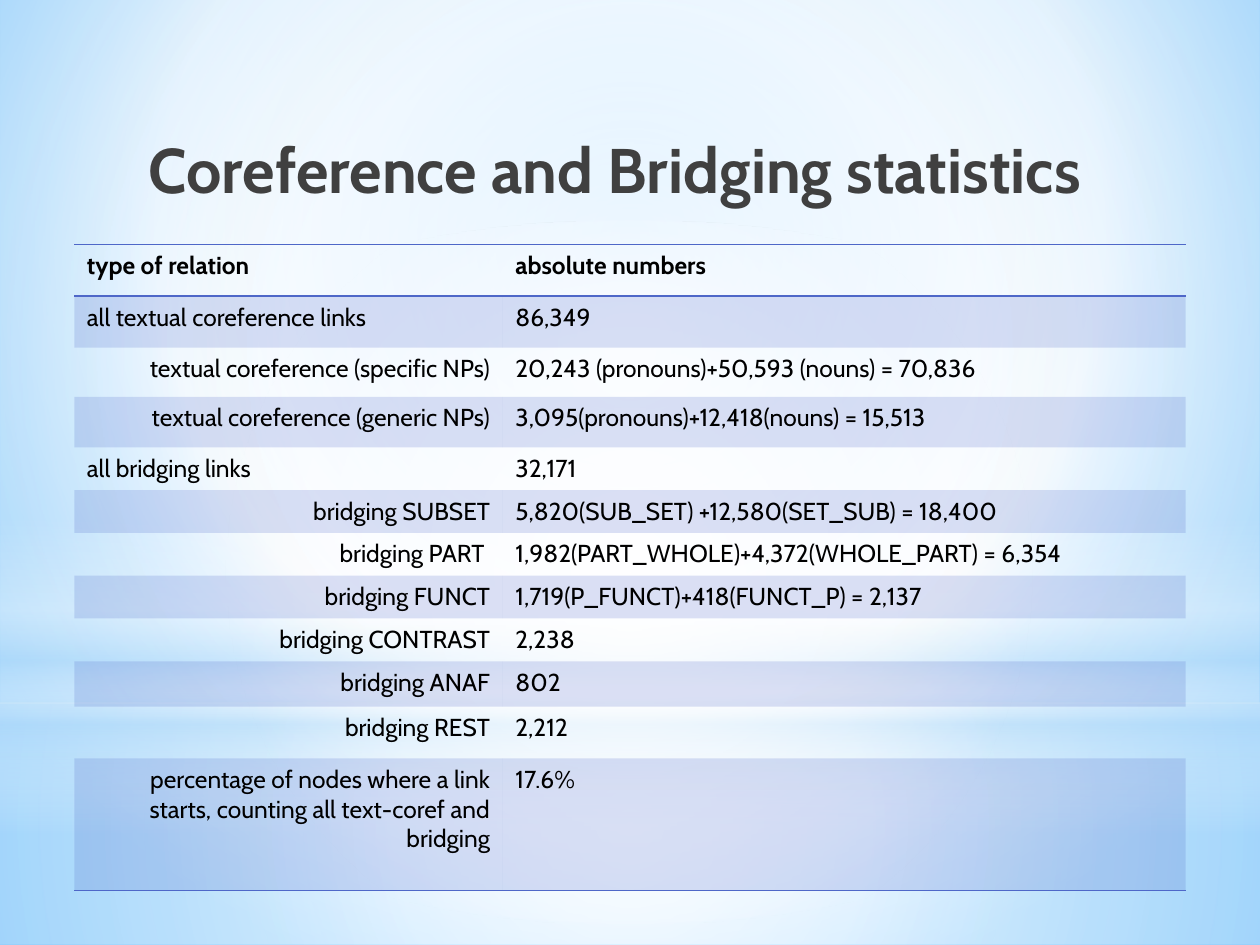
from dataclasses import dataclass

from lxml.etree import SubElement
from pptx import Presentation
from pptx.dml.color import RGBColor
from pptx.enum.shapes import MSO_SHAPE as Shape
from pptx.enum.text import MSO_ANCHOR as Anchor, PP_ALIGN as Align
from pptx.oxml import parse_xml
from pptx.oxml.ns import nsdecls, qn
from pptx.util import Inches, Pt


@dataclass(frozen=True)
class Theme:
    """Colours, font and type sizes of the slide."""
    font: str = "Cabin"
    title_size: int = 36
    body_size: int = 14
    title: str = "404040"
    text: str = "000000"
    accent: str = "4E67C8"
    white: str = "FFFFFF"
    haze: str = "B4DCFA"
    sky: str = "9ED5FF"
    deep_sky: str = "5BB9FF"
    band_alpha: int = 20
    rule_width: int = 1


T = Theme()
CENTER = (50, 50, 50, 50)
NO_STYLE = "{2D5ABB26-0587-4C30-8999-92F81FD0307C}"
COL_WIDTHS = (3.4, 5.42)
ROW_HEIGHTS = (0.41, 0.41, 0.39, 0.4, *[0.34] * 5, 0.36, 0.41, 1.05)
ROWS = (
    ("type of relation", "absolute numbers"),
    ("all textual coreference links", "86,349"),
    ("textual coreference (specific NPs)", "20,243 (pronouns)+50,593 (nouns) = 70,836"),
    ("textual coreference (generic NPs)", "3,095(pronouns)+12,418(nouns) = 15,513"),
    ("all bridging links", "32,171"),
    ("bridging SUBSET", "5,820(SUB_SET) +12,580(SET_SUB) = 18,400"),
    ("bridging PART ", "1,982(PART_WHOLE)+4,372(WHOLE_PART) = 6,354"),
    ("bridging FUNCT", "1,719(P_FUNCT)+418(FUNCT_P) = 2,137"),
    ("bridging CONTRAST", "2,238"),
    ("bridging ANAF", "802"),
    ("bridging REST", "2,212"),
    ("percentage of nodes where a link starts, counting all text-coref and bridging",
     "17.6%"),
)
LEFT_LABELS = (0, 1, 4)
LAST = len(ROWS) - 1
LAYERS = (
    (Shape.RECTANGLE, (0, 5.58, 10, 1.92),
     ((0, T.white, 91), (37, T.white, 76), (100, T.haze, 79)), CENTER),
    (Shape.RECTANGLE, (0, 0, 10, 5.58),
     ((0, T.white, 89), (48, T.white, 62), (100, T.haze, 79)), CENTER),
    (Shape.RECTANGLE, (0, 4.12, 10, 2.5),
     ((0, T.white, 0), (29, T.white, 30), (45, T.haze, 40),
      (55, T.white, 26), (65, T.haze, 60), (100, T.white, 0)), None),
    (Shape.OVAL, (0, 1.75, 10, 5.58),
     ((0, T.white, 100), (56, T.white, 0)), CENTER),
)


def set_gradient(fill, parent, stops, focus=None):
    """Give parent a gradient: round about focus, or downward without one."""
    fill.gradient()
    gs = "".join(
        f'<a:gs pos="{pos * 1000}"><a:srgbClr val="{color}">'
        f'<a:alpha val="{alpha * 1000}"/></a:srgbClr></a:gs>'
        for pos, color, alpha in stops)
    if focus:
        rect = " ".join(f'{k}="{v * 1000}"' for k, v in zip("ltrb", focus))
        way = f'<a:path path="circle"><a:fillToRect {rect}/></a:path>'
    else:
        way = '<a:lin ang="5400000" scaled="0"/>'
    new = parse_xml(f'<a:gradFill {nsdecls("a")} rotWithShape="1">'
                    f'<a:gsLst>{gs}</a:gsLst>{way}</a:gradFill>')
    parent.replace(parent.find(qn("a:gradFill")), new)


def add_background(s):
    """Paint the sky behind the slide and its hazy layers."""
    fill = s.background.fill
    fill.solid()
    stops = ((0, T.sky, 100), (60, T.white, 100), (100, T.deep_sky, 100))
    set_gradient(fill, s.element.find(".//" + qn("p:bgPr")), stops, (20, 10, 20, 60))
    for kind, box, stops, focus in LAYERS:
        sp = s.shapes.add_shape(kind, *map(Inches, box))
        sp.shadow.inherit = False
        sp.line.fill.background()
        set_gradient(sp.fill, sp.element.spPr, stops, focus)


def write(tf, text, size, color, bold=False, align=Align.LEFT):
    """Write one formatted paragraph into a text frame."""
    p = tf.paragraphs[0]
    p.alignment = align
    r = p.add_run()
    r.text = text
    for name, value in {"name": T.font, "size": Pt(size), "bold": bold}.items():
        setattr(r.font, name, value)
    r.font.color.rgb = RGBColor.from_string(color)


def add_title(s, text):
    """Add the centred slide title."""
    tf = s.shapes.add_textbox(*map(Inches, (0.51, 0.99, 8.74, 1.34))).text_frame
    for name, value in {"word_wrap": True, "vertical_anchor": Anchor.TOP}.items():
        setattr(tf, name, value)
    write(tf, text, T.title_size, T.title, True, Align.CENTER)


def set_band(cell, shaded):
    """Shade a cell with the translucent accent, or leave it clear."""
    if not shaded:
        cell.fill.background()
        return
    cell.fill.solid()
    cell.fill.fore_color.rgb = RGBColor.from_string(T.accent)
    color = cell.fill._xPr.find(".//" + qn("a:srgbClr"))
    SubElement(color, qn("a:alpha")).set("val", str(T.band_alpha * 1000))


def set_rules(cell, sides):
    """Draw accent rules on the given sides of a cell."""
    for i, side in enumerate(sides):
        cell._tc.get_or_add_tcPr().insert(i, parse_xml(
            f'<a:ln{side} {nsdecls("a")} w="{Pt(T.rule_width)}"><a:solidFill>'
            f'<a:srgbClr val="{T.accent}"/></a:solidFill></a:ln{side}>'))


def add_statistics(s):
    """Add the banded table of relation counts."""
    box = (0.59, 1.94, sum(COL_WIDTHS), sum(ROW_HEIGHTS))
    frame = s.shapes.add_table(len(ROWS), len(COL_WIDTHS), *map(Inches, box))
    table = frame.table
    table.first_row = table.horz_banding = False
    frame.element.find(".//" + qn("a:tableStyleId")).text = NO_STYLE
    for col, width in zip(table.columns, COL_WIDTHS):
        col.width = Inches(width)
    for row, height in zip(table.rows, ROW_HEIGHTS):
        row.height = Inches(height)
    for i, texts in enumerate(ROWS):
        for j, text in enumerate(texts):
            cell = table.cell(i, j)
            left = j == 1 or i in LEFT_LABELS
            write(cell.text_frame, text, T.body_size, T.text, i == 0,
                  Align.LEFT if left else Align.RIGHT)
            set_band(cell, i % 2 == 1)
            set_rules(cell, {0: "TB", LAST: "B"}.get(i, ""))


def main():
    """Build and save the slide."""
    prs = Presentation()
    prs.slide_width, prs.slide_height = Inches(10), Inches(7.5)
    s = prs.slides.add_slide(prs.slide_layouts[6])
    add_background(s)
    add_statistics(s)
    add_title(s, "Coreference and Bridging statistics")
    prs.save("out.pptx")


if __name__ == "__main__":
    main()
